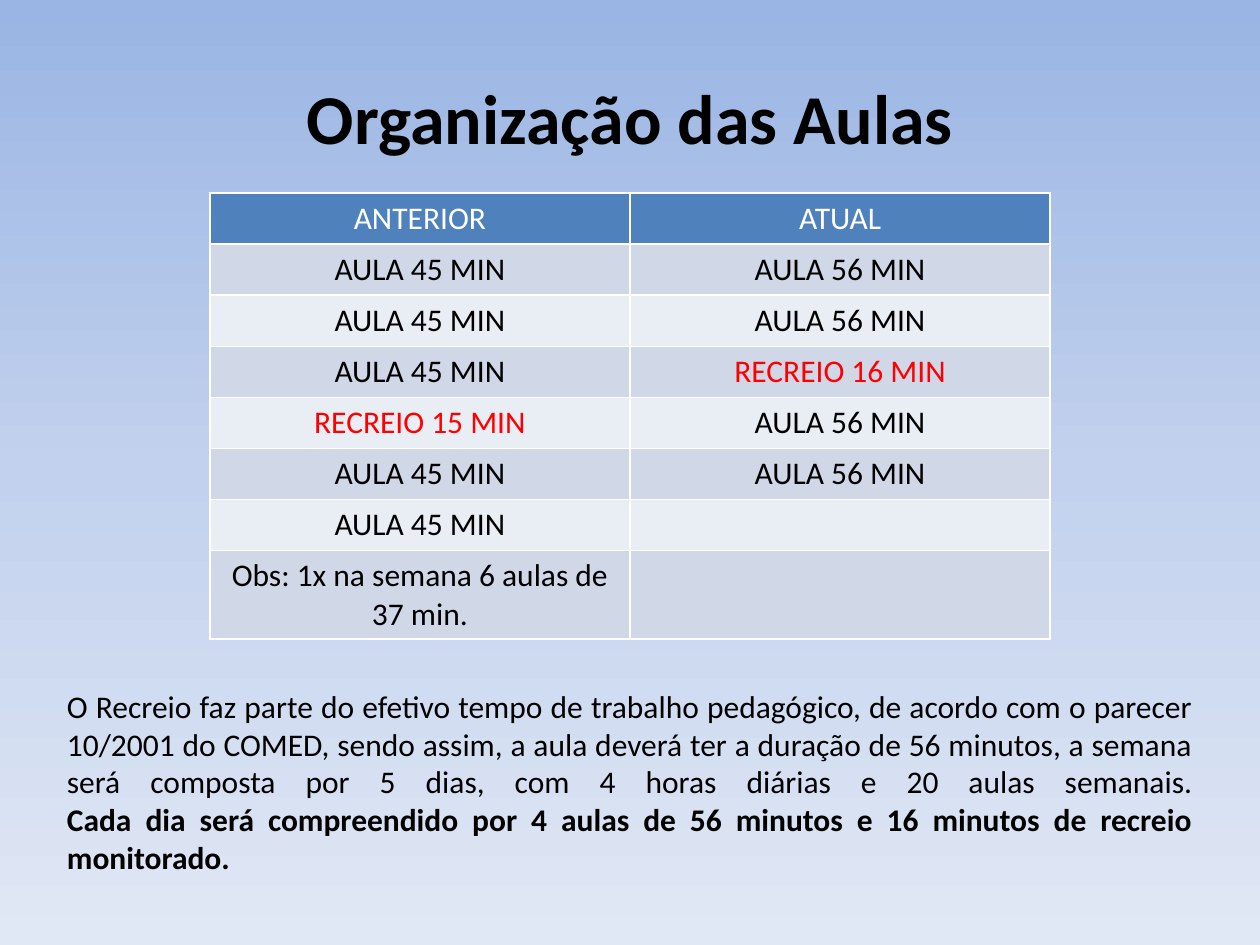
from copy import deepcopy

from lxml import etree
from pptx import Presentation
from pptx.dml.color import RGBColor
from pptx.enum.text import MSO_ANCHOR, PP_ALIGN
from pptx.oxml.ns import qn
from pptx.util import Cm, Pt

CENTER, JUSTIFY = PP_ALIGN.CENTER, PP_ALIGN.JUSTIFY
MIDDLE, TOP = MSO_ANCHOR.MIDDLE, MSO_ANCHOR.TOP

FONT = "Calibri"
BLACK, WHITE, RED = "000000", "FFFFFF", "FF0000"
HEADER_FILL = "4F81BD"
BAND_FILLS = ("D0D8E8", "E9EDF4")
BACKGROUND_STOPS = ((0, "9AB5E4"), (0.5, "C2D1ED"), (1, "E1E8F5"))

SCHEDULE = [
    ("ANTERIOR", "ATUAL"),
    ("AULA 45 MIN", "AULA 56 MIN"),
    ("AULA 45 MIN", "AULA 56 MIN"),
    ("AULA 45 MIN", "RECREIO 16 MIN"),
    ("RECREIO 15 MIN", "AULA 56 MIN"),
    ("AULA 45 MIN", "AULA 56 MIN"),
    ("AULA 45 MIN", ""),
    ("Obs: 1x na semana 6 aulas de 37 min.", ""),
]
EXPLANATION = (
    "O Recreio faz parte do efetivo tempo de trabalho pedagógico, de acordo com o "
    "parecer 10/2001 do COMED, sendo assim, a aula deverá ter a duração de 56 minutos, "
    "a semana será composta por 5 dias, com 4 horas diárias e 20 aulas semanais."
)
CONCLUSION = (
    "Cada dia será compreendido por 4 aulas de 56 minutos e 16 minutos de recreio monitorado."
)


def rgb(color):
    return RGBColor.from_string(color)


def set_background(slide):
    fill = slide.background.fill
    fill.gradient()
    fill.gradient_angle = 270
    stop_list = slide.element.xpath(".//a:gsLst")[0]
    stop_list.append(deepcopy(stop_list[-1]))
    for stop, (position, color) in zip(fill.gradient_stops, BACKGROUND_STOPS):
        stop.position = position
        stop.color.rgb = rgb(color)


def write(tf, text, size, color, align):
    """Fill a text frame with one paragraph and return it."""
    p = tf.paragraphs[0]
    p.text = text
    p.alignment = align
    p.font.size = Pt(size)
    for r in p.runs:
        r.font.name = FONT
        r.font.size = Pt(size)
        r.font.color.rgb = rgb(color)
    return p


def add_text(slide, left, top, width, height, text, size, align, anchor):
    sp = slide.shapes.add_textbox(Cm(left), Cm(top), Cm(width), Cm(height))
    tf = sp.text_frame
    tf.word_wrap = True
    tf.vertical_anchor = anchor
    return write(tf, text, size, BLACK, align)


def set_borders(cell, color, width):
    tc_pr = cell._tc.get_or_add_tcPr()
    for index, side in enumerate(("lnL", "lnR", "lnT", "lnB")):
        ln = etree.Element(qn(f"a:{side}"), w=str(Pt(width)))
        fill = etree.SubElement(ln, qn("a:solidFill"))
        etree.SubElement(fill, qn("a:srgbClr"), val=color)
        tc_pr.insert(index, ln)


def text_color(row, text):
    if row == 0:
        return WHITE
    return RED if text.startswith("RECREIO") else BLACK


def add_schedule(slide, left, top, col_width, row_height):
    rows, cols = len(SCHEDULE), len(SCHEDULE[0])
    table = slide.shapes.add_table(
        rows, cols, Cm(left), Cm(top), Cm(col_width * cols), Cm(row_height * rows)
    ).table
    for column in table.columns:
        column.width = Cm(col_width)
    for i, texts in enumerate(SCHEDULE):
        table.rows[i].height = Cm(row_height)
        for j, text in enumerate(texts):
            cell = table.cell(i, j)
            cell.fill.solid()
            cell.fill.fore_color.rgb = rgb(BAND_FILLS[(i - 1) % 2] if i else HEADER_FILL)
            set_borders(cell, WHITE, 1)
            p = write(cell.text_frame, text, 18, text_color(i, text), CENTER)
            p.font.bold = False
            for r in p.runs:
                r.font.bold = False


def main():
    prs = Presentation()
    prs.slide_width, prs.slide_height = Cm(25.4), Cm(19.05)
    slide = prs.slides.add_slide(prs.slide_layouts[6])
    set_background(slide)

    title = add_text(slide, 1.27, 0.76, 22.86, 3.18, "Organização das Aulas", 40, CENTER, MIDDLE)
    title.runs[0].font.bold = True

    add_schedule(slide, 4.23, 3.89, 8.47, 1.03)

    note = add_text(slide, 1.1, 13.72, 23.2, 4.12, f"{EXPLANATION}\n{CONCLUSION}", 18, JUSTIFY, TOP)
    note.runs[-1].font.bold = True

    prs.save("out.pptx")


if __name__ == "__main__":
    main()
